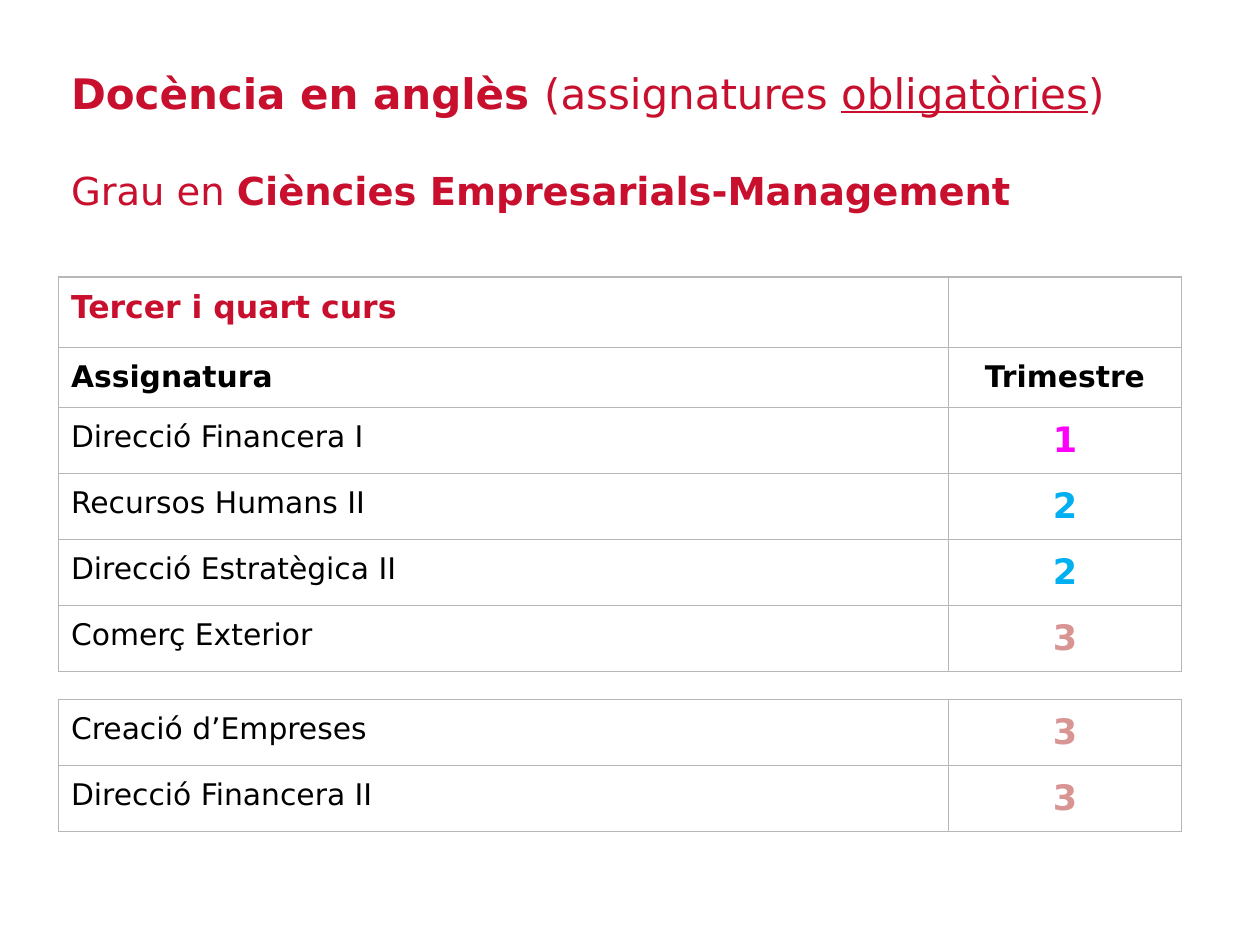
from dataclasses import dataclass
from lxml.etree import SubElement
from pptx import Presentation
from pptx.dml.color import RGBColor
from pptx.enum.text import MSO_ANCHOR as Anchor, MSO_AUTO_SIZE as AutoSize, PP_ALIGN as Align
from pptx.oxml.ns import qn
from pptx.slide import Slide
from pptx.util import Pt

RED, BLACK, WHITE, GREY = "C8102E", "000000", "FFFFFF", "B7B7B7"
TERM_COLOURS = {"1": "FF00FF", "2": "00B0F0", "3": "D99593"}


def colour(value):
    return RGBColor.from_string(value)


def assign(target, values):
    for name, value in values.items():
        setattr(target, name, value)


@dataclass
class SubjectPage:
    """Style and drawing methods for the page of subjects."""
    page: Slide
    font: str = "DejaVu Sans"
    left: float = 33.4
    columns: tuple = (508.6, 133.2)
    inset: float = 7.2

    def span(self, para, text, size, tint, bold=False, underline=False):
        span = para.add_run()
        span.text = text
        assign(span.font, dict(name=self.font, size=Pt(size), bold=bold, underline=underline))
        span.font.color.rgb = colour(tint)

    def title(self, top, width, height, gap, lines):
        box = self.page.shapes.title
        assign(box, dict(left=Pt(self.left), top=Pt(top), width=Pt(width), height=Pt(height)))
        frame = box.text_frame
        assign(frame, dict(word_wrap=True, auto_size=AutoSize.NONE, vertical_anchor=Anchor.TOP,
                           margin_left=Pt(self.inset), margin_right=Pt(self.inset),
                           margin_top=Pt(5), margin_bottom=Pt(3.6)))
        for index, (size, spans) in enumerate(lines):
            para = frame.add_paragraph() if index else frame.paragraphs[0]
            assign(para, dict(alignment=Align.LEFT, space_before=Pt(gap if index else 0)))
            for text, bold, underline in spans:
                self.span(para, text, size, RED, bold, underline)

    def borders(self, cell):
        properties = cell._tc.get_or_add_tcPr()
        for side in ("a:lnL", "a:lnR", "a:lnT", "a:lnB"):
            line = SubElement(properties, qn(side), w=str(Pt(0.75)))
            fill = SubElement(line, qn("a:solidFill"))
            SubElement(fill, qn("a:srgbClr"), val=GREY)

    def cell(self, cell, content, alignment):
        margins = ("margin_left", "margin_right", "margin_top", "margin_bottom")
        assign(cell, dict.fromkeys(margins, Pt(self.inset)))
        self.borders(cell)
        cell.fill.solid()
        cell.fill.fore_color.rgb = colour(WHITE)
        if content:
            para = cell.text_frame.paragraphs[0]
            para.alignment = alignment
            self.span(para, *content)

    def table(self, top, rows):
        heights = [height for height, _ in rows]
        frame = self.page.shapes.add_table(len(rows), len(self.columns), Pt(self.left), Pt(top),
                                           Pt(sum(self.columns)), Pt(sum(heights)))
        table = frame.table
        assign(table, dict(first_row=False, horz_banding=False))
        for column, width in zip(table.columns, self.columns):
            column.width = Pt(width)
        for row, (height, contents) in zip(table.rows, rows):
            row.height = Pt(height)
            for cell, content, alignment in zip(row.cells, contents, (Align.LEFT, Align.CENTER)):
                self.cell(cell, content, alignment)


def subject(name, term):
    return 37.7, [(name, 17, BLACK), (term, 20, TERM_COLOURS[term], True)]


def main():
    deck = Presentation()
    assign(deck, dict(slide_width=Pt(720), slide_height=Pt(540)))
    sheet = SubjectPage(deck.slides.add_slide(deck.slide_layouts[5]))
    sheet.title(33.8, 674.6, 99.4, 28, [
        (24, [("Docència en anglès ", True, False), ("(assignatures ", False, False),
              ("obligatòries", False, True), (")", False, False)]),
        (22, [("Grau en ", False, False), ("Ciències Empresarials-Management", True, False)]),
    ])
    sheet.table(158.3, [
        (40.2, [("Tercer i quart curs", 18, RED, True), None]),
        (34.2, [("Assignatura", 17, BLACK, True), ("Trimestre", 17, BLACK, True)]),
        subject("Direcció Financera I", "1"),
        subject("Recursos Humans II", "2"),
        subject("Direcció Estratègica II", "2"),
        subject("Comerç Exterior", "3"),
    ])
    sheet.table(399.6, [subject("Creació d’Empreses", "3"), subject("Direcció Financera II", "3")])
    deck.save("out.pptx")


if __name__ == "__main__":
    main()
